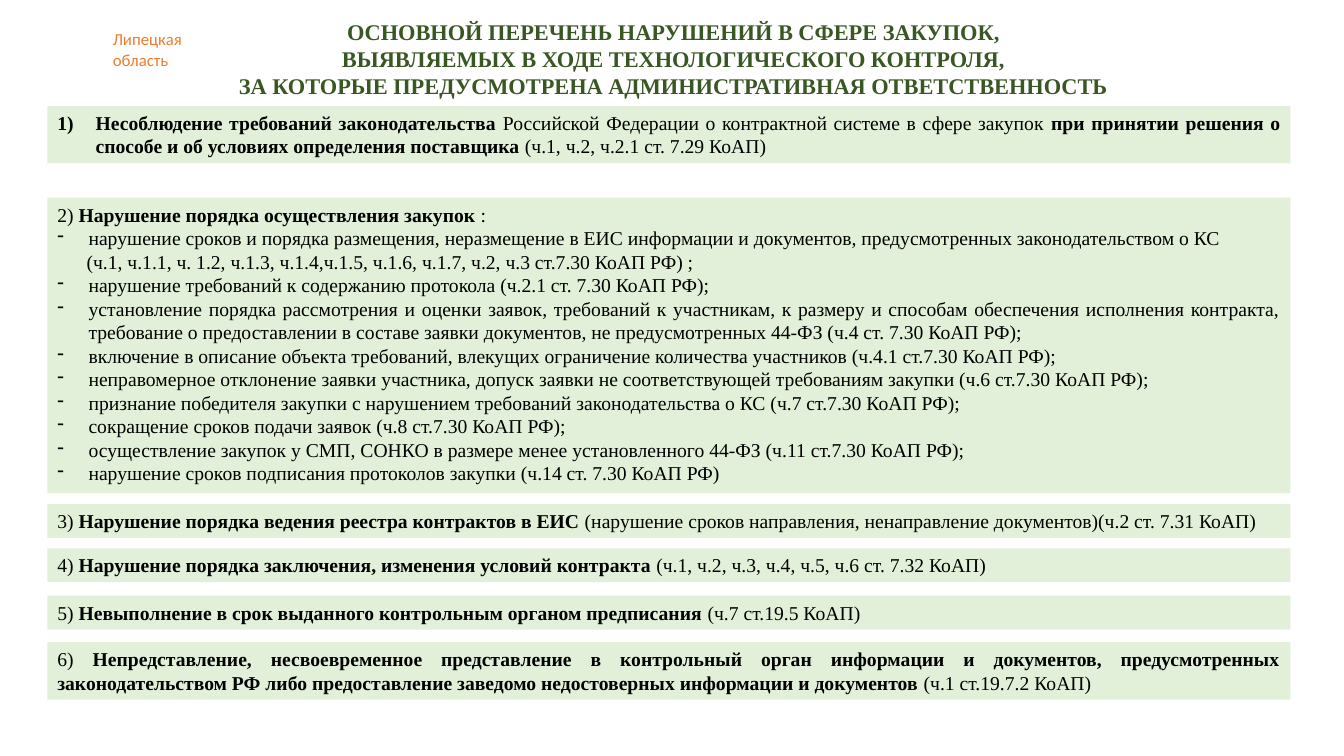
from lxml.etree import SubElement
from pptx import Presentation
from pptx.dml.color import RGBColor
from pptx.enum.shapes import MSO_SHAPE
from pptx.enum.text import MSO_ANCHOR, PP_ALIGN
from pptx.oxml.ns import qn
from pptx.util import Inches, Pt

SERIF, SANS = "Times New Roman", "Calibri"
GREEN, PALE_GREEN, ORANGE, BLACK = "385723", "E2F0D9", "ED7D31", "000000"

REGION = ["Липецкая", "область"]
HEADING = [
    "ОСНОВНОЙ ПЕРЕЧЕНЬ НАРУШЕНИЙ В СФЕРЕ ЗАКУПОК,",
    "ВЫЯВЛЯЕМЫХ В ХОДЕ ТЕХНОЛОГИЧЕСКОГО КОНТРОЛЯ,",
    "ЗА КОТОРЫЕ ПРЕДУСМОТРЕНА АДМИНИСТРАТИВНАЯ ОТВЕТСТВЕННОСТЬ",
]

# Paragraph kind -> (left margin, first-line indent, bullet tag, bullet attributes)
KINDS = {
    "plain": (0, 0, None, {}),
    "number": (0.38, -0.38, "a:buAutoNum", {"type": "arabicParenR"}),
    "dash": (0.31, -0.31, "a:buChar", {"char": "-"}),
    "continued": (0.29, 0, None, {}),
}

# (top, number of text lines, paragraphs); ** switches bold on and off
VIOLATIONS = [
    (1.05, 2, [
        ("number", "**Несоблюдение требований законодательства** Российской Федерации о контрактной "
         "системе в сфере закупок **при принятии решения о способе и об условиях определения "
         "поставщика **(ч.1, ч.2, ч.2.1 ст. 7.29 КоАП)"),
    ]),
    (1.96, 12, [
        ("plain", "2) **Нарушение порядка осуществления закупок **:"),
        ("dash", "нарушение сроков и порядка размещения, неразмещение в ЕИС информации и документов, "
         "предусмотренных законодательством о КС"),
        ("continued", "(ч.1, ч.1.1, ч. 1.2, ч.1.3, ч.1.4,ч.1.5, ч.1.6, ч.1.7, ч.2, ч.3 ст.7.30 КоАП РФ) ;"),
        ("dash", "нарушение требований к содержанию протокола (ч.2.1 ст. 7.30 КоАП РФ);"),
        ("dash", "установление порядка рассмотрения и оценки заявок, требований к участникам, к размеру "
         "и способам обеспечения исполнения контракта, требование о предоставлении в составе заявки "
         "документов, не предусмотренных 44-ФЗ (ч.4 ст. 7.30 КоАП РФ);"),
        ("dash", "включение в описание объекта требований, влекущих ограничение количества участников "
         "(ч.4.1 ст.7.30 КоАП РФ);"),
        ("dash", "неправомерное отклонение заявки участника, допуск заявки не соответствующей "
         "требованиям закупки (ч.6 ст.7.30 КоАП РФ);"),
        ("dash", "признание победителя закупки с нарушением требований законодательства о КС "
         "(ч.7 ст.7.30 КоАП РФ);"),
        ("dash", "сокращение сроков подачи заявок (ч.8 ст.7.30 КоАП РФ);"),
        ("dash", "осуществление закупок у СМП, СОНКО в размере менее установленного 44-ФЗ "
         "(ч.11 ст.7.30 КоАП РФ);"),
        ("dash", "нарушение сроков подписания протоколов закупки (ч.14 ст. 7.30 КоАП РФ)"),
    ]),
    (5.0, 1, [
        ("plain", "3) **Нарушение порядка ведения реестра контрактов в ЕИС **(нарушение сроков "
         "направления, ненаправление документов)(ч.2 ст. 7.31 КоАП)"),
    ]),
    (5.44, 1, [
        ("plain", "4) **Нарушение порядка заключения, изменения условий контракта **"
         "(ч.1, ч.2, ч.3, ч.4, ч.5, ч.6 ст. 7.32 КоАП)"),
    ]),
    (5.91, 1, [
        ("plain", "5) **Невыполнение в срок выданного контрольным органом предписания **(ч.7 ст.19.5 КоАП)"),
    ]),
    (6.37, 2, [
        ("plain", "6) **Непредставление, несвоевременное представление в контрольный орган информации и "
         "документов, предусмотренных законодательством РФ либо предоставление заведомо недостоверных "
         "информации и документов** (ч.1 ст.19.7.2 КоАП)"),
    ]),
]

SLIDE_W, SLIDE_H = 13.33, 7.5
BAND_LEFT, BAND_W = 0.47, 12.33
LINE_H, BAND_PADDING = 0.236, 0.1


def rgb(value):
    return RGBColor.from_string(value)


def write(shape, paragraphs, size=14, font=SERIF, color=BLACK, bold=False,
          align=PP_ALIGN.LEFT, anchor=MSO_ANCHOR.TOP):
    """Fill a shape with (kind, text) paragraphs; ** toggles bold."""
    frame = shape.text_frame
    frame.word_wrap = True
    frame.vertical_anchor = anchor
    frame.margin_left = frame.margin_right = Inches(0.1)
    frame.margin_top = frame.margin_bottom = Inches(0.05)
    for index, (kind, text) in enumerate(paragraphs):
        paragraph = frame.add_paragraph() if index else frame.paragraphs[0]
        paragraph.alignment = align
        margin, indent, bullet, attributes = KINDS[kind]
        properties = paragraph._p.get_or_add_pPr()
        properties.set("marL", str(Inches(margin)))
        properties.set("indent", str(Inches(indent)))
        if bullet:
            SubElement(properties, qn(bullet), attributes)
        for part, piece in enumerate(text.split("**")):
            if piece:
                run = paragraph.add_run()
                run.text = piece
                run.font.name, run.font.size = font, Pt(size)
                run.font.bold = bold or part % 2 == 1
                run.font.color.rgb = rgb(color)


def plain(lines):
    return [("plain", line) for line in lines]


def main():
    deck = Presentation()
    deck.slide_width, deck.slide_height = Inches(SLIDE_W), Inches(SLIDE_H)
    slide = deck.slides.add_slide(deck.slide_layouts[5])

    region = slide.shapes.add_textbox(Inches(1.02), Inches(0.24), Inches(0.91), Inches(0.5))
    write(region, plain(REGION), size=12, font=SANS, color=ORANGE)

    heading = slide.shapes.title
    heading.left, heading.top = Inches(0.98), Inches(0.13)
    heading.width, heading.height = Inches(11.4), Inches(0.91)
    write(heading, plain(HEADING), size=16, color=GREEN, bold=True, align=PP_ALIGN.CENTER)

    for top, lines, paragraphs in VIOLATIONS:
        band = slide.shapes.add_shape(
            MSO_SHAPE.RECTANGLE, Inches(BAND_LEFT), Inches(top),
            Inches(BAND_W), Inches(lines * LINE_H + BAND_PADDING))
        band.shadow.inherit = False
        band.fill.solid()
        band.fill.fore_color.rgb = rgb(PALE_GREEN)
        band.line.fill.background()
        write(band, paragraphs, align=PP_ALIGN.JUSTIFY)

    deck.save("out.pptx")


if __name__ == "__main__":
    main()
